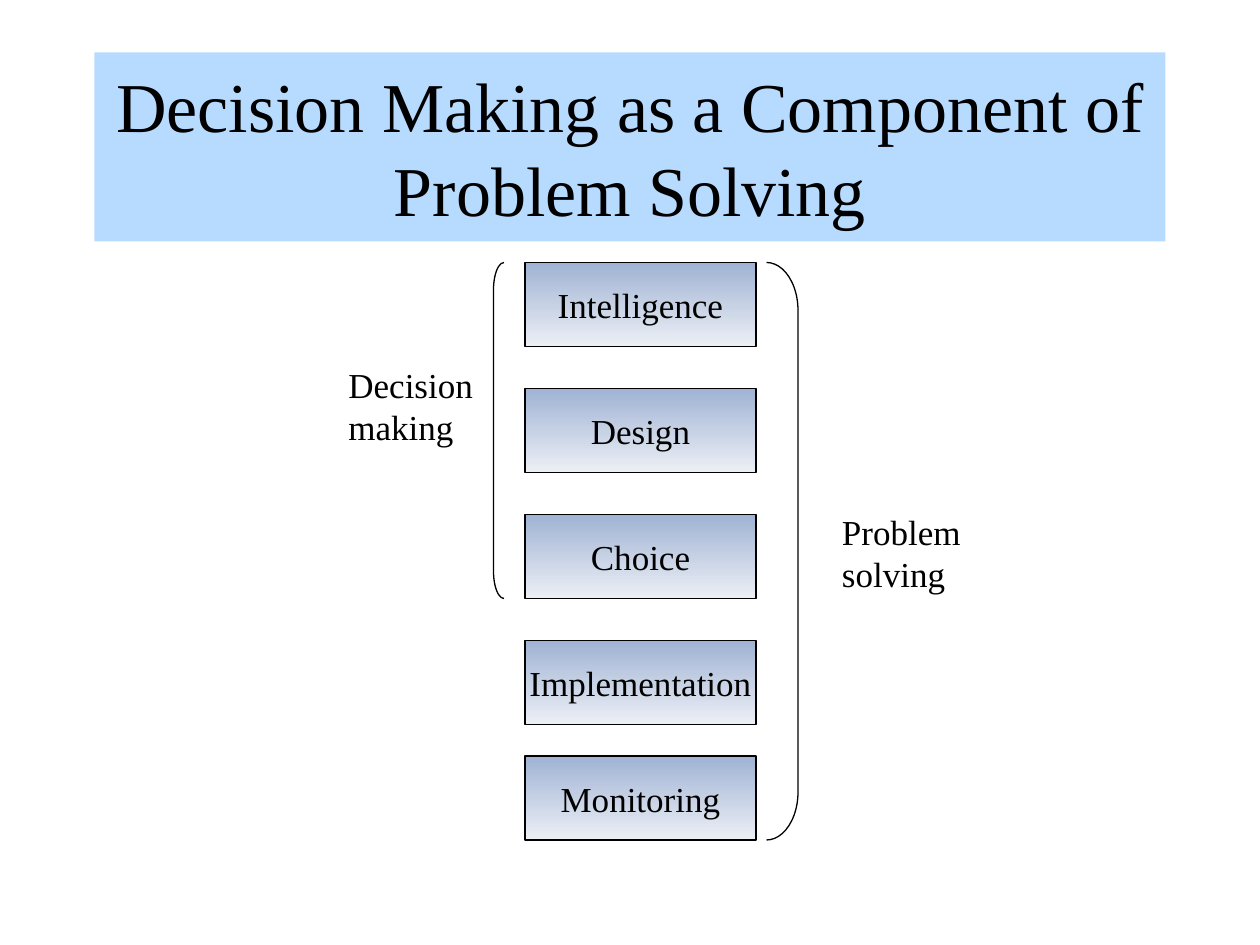
"""Build a slide that shows decision making as a component of problem solving."""

from dataclasses import dataclass

from pptx import Presentation
from pptx.dml.color import RGBColor
from pptx.enum.shapes import MSO_SHAPE
from pptx.enum.text import MSO_ANCHOR, MSO_AUTO_SIZE, PP_ALIGN
from pptx.shapes.autoshape import Shape
from pptx.slide import Slide
from pptx.util import Inches, Pt

COLUMNS, ROWS = 120, 90
SLIDE_WIDTH, SLIDE_HEIGHT = Inches(10), Inches(7.5)


@dataclass(frozen=True)
class Theme:
    font: str = "Times New Roman"
    title_size: int = 40
    body_size: int = 20
    line_width: float = 0.75
    ink: RGBColor = RGBColor(0x00, 0x00, 0x00)
    banner: RGBColor = RGBColor(0xB7, 0xDB, 0xFF)
    phase_top: RGBColor = RGBColor(0xA0, 0xB3, 0xD4)
    phase_bottom: RGBColor = RGBColor(0xEC, 0xEF, 0xF5)


@dataclass(frozen=True)
class Area:
    column: float
    row: float
    columns: float
    rows: float

    def bounds(self) -> tuple[int, int, int, int]:
        across, down = SLIDE_WIDTH / COLUMNS, SLIDE_HEIGHT / ROWS
        return (round(self.column * across), round(self.row * down),
                round(self.columns * across), round(self.rows * down))


@dataclass(frozen=True)
class Phase:
    name: str
    row: int


@dataclass(frozen=True)
class Bracket:
    kind: MSO_SHAPE
    area: Area
    curve: float
    label: tuple[str, ...]
    label_area: Area


THEME = Theme()
TITLE = "Decision Making as a Component of Problem Solving"
TITLE_AREA = Area(9, 5, 102, 18)
PHASES = (
    Phase("Intelligence", 25),
    Phase("Design", 37),
    Phase("Choice", 49),
    Phase("Implementation", 61),
    Phase("Monitoring", 72),
)
BRACKETS = (
    Bracket(MSO_SHAPE.LEFT_BRACKET, Area(47, 25, 1, 32), 2.67,
            ("Decision", "making"), Area(32, 34, 15, 9.24)),
    Bracket(MSO_SHAPE.RIGHT_BRACKET, Area(73, 25, 3, 55), 1.53,
            ("Problem", "solving"), Area(79, 48, 15, 9.24)),
)


def write(shape: Shape, lines: tuple[str, ...], size: int,
          alignment: PP_ALIGN, anchor: MSO_ANCHOR, wrap: bool = True) -> None:
    frame = shape.text_frame
    frame.word_wrap = wrap
    frame.vertical_anchor = anchor
    paragraph = frame.paragraphs[0]
    paragraph.alignment = alignment
    for index, line in enumerate(lines):
        if index:
            paragraph.add_line_break()
        run = paragraph.add_run()
        run.text = line
        run.font.name = THEME.font
        run.font.size = Pt(size)
        run.font.color.rgb = THEME.ink


def add_outlined(slide: Slide, kind: MSO_SHAPE, area: Area) -> Shape:
    shape = slide.shapes.add_shape(kind, *area.bounds())
    shape.shadow.inherit = False
    shape.line.color.rgb = THEME.ink
    shape.line.width = Pt(THEME.line_width)
    return shape


def add_title(slide: Slide) -> None:
    banner = slide.shapes.add_textbox(*TITLE_AREA.bounds())
    banner.fill.solid()
    banner.fill.fore_color.rgb = THEME.banner
    write(banner, (TITLE,), THEME.title_size, PP_ALIGN.CENTER, MSO_ANCHOR.MIDDLE)


def add_phase(slide: Slide, phase: Phase) -> None:
    box = add_outlined(slide, MSO_SHAPE.RECTANGLE, Area(50, phase.row, 22, 8))
    box.fill.gradient()
    box.fill.gradient_angle = 270
    for stop, color in zip(box.fill.gradient_stops,
                           (THEME.phase_top, THEME.phase_bottom)):
        stop.color.rgb = color
    write(box, (phase.name,), THEME.body_size, PP_ALIGN.CENTER,
          MSO_ANCHOR.MIDDLE, wrap=False)


def add_bracket(slide: Slide, bracket: Bracket) -> None:
    shape = add_outlined(slide, bracket.kind, bracket.area)
    shape.fill.background()
    shape.adjustments[0] = bracket.curve
    label = slide.shapes.add_textbox(*bracket.label_area.bounds())
    write(label, bracket.label, THEME.body_size, PP_ALIGN.LEFT, MSO_ANCHOR.TOP)
    label.text_frame.auto_size = MSO_AUTO_SIZE.SHAPE_TO_FIT_TEXT


def main() -> None:
    presentation = Presentation()
    presentation.slide_width, presentation.slide_height = SLIDE_WIDTH, SLIDE_HEIGHT
    slide = presentation.slides.add_slide(presentation.slide_layouts[6])
    add_title(slide)
    for phase in PHASES:
        add_phase(slide, phase)
    for bracket in BRACKETS:
        add_bracket(slide, bracket)
    presentation.save("out.pptx")


if __name__ == "__main__":
    main()
